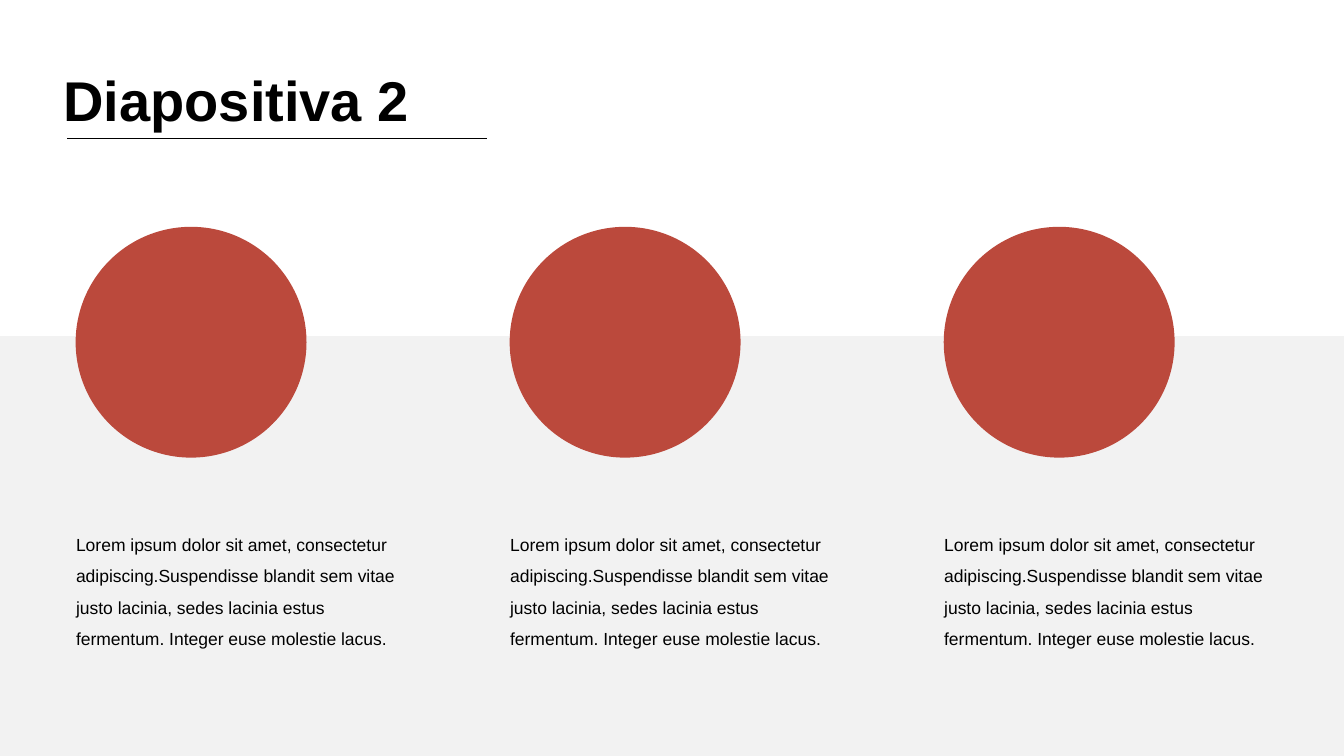
from dataclasses import dataclass

from lxml import etree
from pptx import Presentation
from pptx.dml.color import RGBColor
from pptx.enum import shapes, text
from pptx.oxml.ns import qn
from pptx.util import Inches, Pt


@dataclass(frozen=True)
class Theme:
    font: str = "Arial"
    ink: str = "000000"
    background: str = "FFFFFF"
    band: str = "F2F2F2"
    accent: str = "BB493C"
    title_size: int = 80
    body_size: int = 25
    rule_width: float = 0.5


THEME = Theme()
SLIDE_WIDTH, SLIDE_HEIGHT = 26.66, 15
COLUMN_COUNT, COLUMN_PITCH = 3, 8.61
COLUMN_TEXT = (
    "Lorem ipsum dolor sit amet, consectetur adipiscing.Suspendisse blandit "
    "sem vitae justo lacinia, sedes lacinia estus fermentum. Integer euse "
    "molestie lacus."
)


def set_attributes(target, values):
    for name, value in values.items():
        setattr(target, name, value)


def write_text(shape, content, size, line_spacing, bold=False):
    frame = shape.text_frame
    frame.text = content
    set_attributes(frame, {
        "word_wrap": True,
        "auto_size": text.MSO_AUTO_SIZE.NONE,
        "vertical_anchor": text.MSO_ANCHOR.TOP,
    })
    paragraph = frame.paragraphs[0]
    set_attributes(paragraph, {
        "alignment": text.PP_ALIGN.LEFT,
        "line_spacing": line_spacing,
        "space_before": Pt(0),
    })
    font = paragraph.runs[0].font
    set_attributes(font, {"name": THEME.font, "size": Pt(size), "bold": bold})
    font.color.rgb = RGBColor.from_string(THEME.ink)


def add_filled_shape(slide, kind, left, top, width, height, color):
    shape = slide.shapes.add_shape(
        kind, Inches(left), Inches(top), Inches(width), Inches(height))
    shape.shadow.inherit = False
    shape.fill.solid()
    shape.fill.fore_color.rgb = RGBColor.from_string(color)
    shape.line.fill.background()


def add_heading(slide, left, top, width, height):
    # Title
    title = slide.shapes.title
    set_attributes(title, {
        "left": Inches(left), "top": Inches(top),
        "width": Inches(width), "height": Inches(height),
    })
    write_text(title, "Diapositiva 2", THEME.title_size, 0.8, bold=True)

    # Rule under the title
    rule_left, rule_top = Inches(left + 0.17), Inches(top + 1.25)
    rule = slide.shapes.add_connector(
        shapes.MSO_CONNECTOR.STRAIGHT,
        rule_left, rule_top, rule_left + Inches(8.33), rule_top)
    rule.line.color.rgb = RGBColor.from_string(THEME.ink)
    rule.line.width = Pt(THEME.rule_width)
    etree.SubElement(rule._element.spPr, qn("a:effectLst"))


def add_column(slide, left, top, width):
    # Text below the circle
    box = slide.shapes.add_textbox(
        Inches(left), Inches(top + 5.83), Inches(width), Inches(2.59))
    write_text(box, COLUMN_TEXT, THEME.body_size, 1.5)

    # Circle, aligned with the text inside the box
    add_filled_shape(slide, shapes.MSO_SHAPE.OVAL,
                     left + 0.09, top, 4.58, 4.58, THEME.accent)


def main():
    presentation = Presentation()
    presentation.slide_width = Inches(SLIDE_WIDTH)
    presentation.slide_height = Inches(SLIDE_HEIGHT)
    slide = presentation.slides.add_slide(presentation.slide_layouts[5])
    slide.background.fill.solid()
    slide.background.fill.fore_color.rgb = RGBColor.from_string(THEME.background)

    add_heading(slide, 1.16, 1.5, 10.42, 1.22)

    # Grey band across the lower part
    band_top = 6.67
    add_filled_shape(slide, shapes.MSO_SHAPE.RECTANGLE, 0, band_top,
                     SLIDE_WIDTH, SLIDE_HEIGHT - band_top, THEME.band)

    for index in range(COLUMN_COUNT):
        add_column(slide, 1.41 + index * COLUMN_PITCH, 4.5, 6.88)

    presentation.save("out.pptx")


if __name__ == "__main__":
    main()
